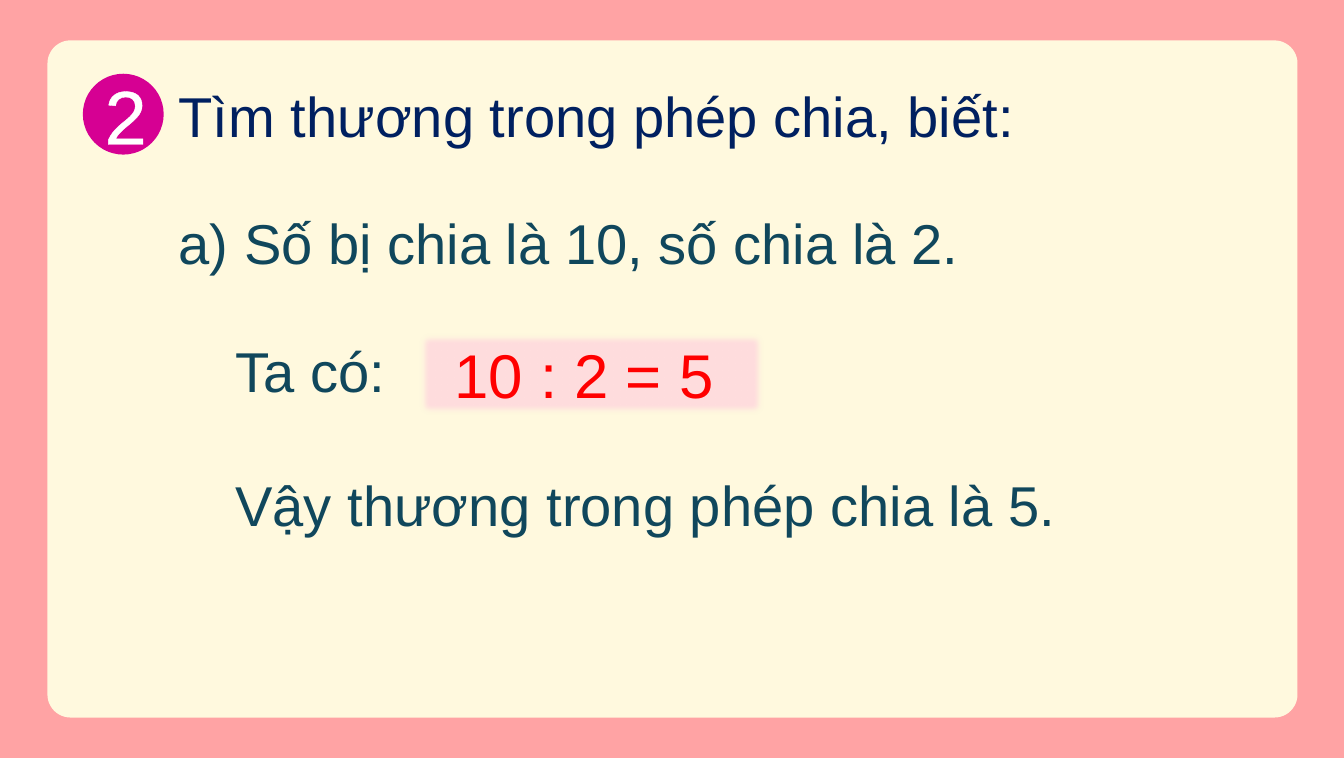
from dataclasses import dataclass

from lxml.etree import SubElement
from pptx import Presentation
from pptx.dml.color import RGBColor as RGB
from pptx.enum.shapes import MSO_SHAPE as SHAPE
from pptx.enum.text import MSO_ANCHOR as ANCHOR, PP_ALIGN as ALIGN
from pptx.oxml import parse_xml
from pptx.oxml.ns import nsdecls, qn
from pptx.util import Inches, Pt


@dataclass(frozen=True)
class Theme:
    font: str = "Arial"
    border: str = "FFA3A4"
    card: str = "FFF9DE"
    badge: str = "D60093"
    white: str = "FFFFFF"
    title: str = "002060"
    body: str = "10475C"
    highlight: str = "FFDDDE"
    answer: str = "FF0000"
    text_size: int = 40
    answer_size: int = 44
    badge_size: int = 54


theme = Theme()
prs = Presentation()
prs.slide_width, prs.slide_height = Inches(13.3), Inches(7.5)
s = prs.slides.add_slide(prs.slide_layouts[6])
s.background.fill.solid()
s.background.fill.fore_color.rgb = RGB.from_string(theme.border)


def add_panel(kind, box, color):
    sp = s.shapes.add_shape(kind, *map(Inches, box))
    sp.shadow.inherit = False
    sp.fill.solid()
    sp.fill.fore_color.rgb = RGB.from_string(color)
    sp.line.fill.background()
    return sp


def write(sp, text, size, color):
    tf = sp.text_frame
    tf.word_wrap = True
    p = tf.paragraphs[0]
    p.text = text
    p.font.name = theme.font
    p.font.size = Pt(size)
    p.font.color.rgb = RGB.from_string(color)
    return p


# Card
card = add_panel(SHAPE.ROUNDED_RECTANGLE, (0.47, 0.4, 12.37, 6.7), theme.card)
card.adjustments[0] = 0.034

# Exercise number, with outlined digit
badge = add_panel(SHAPE.OVAL, (0.82, 0.73, 0.8, 0.8), theme.badge)
badge.text_frame.vertical_anchor = ANCHOR.MIDDLE
p = write(badge, "2", theme.badge_size, theme.white)
p.alignment = ALIGN.CENTER
outline = parse_xml(
    f'<a:ln {nsdecls("a")} w="{Pt(1.45)}"><a:solidFill>'
    f'<a:srgbClr val="{theme.white}"/></a:solidFill></a:ln>')
p.runs[0].font._element.insert(0, outline)

# Soft-edged highlight behind the calculation
highlight = add_panel(SHAPE.RECTANGLE, (4.14, 3.28, 3.43, 0.84), theme.highlight)
highlight.line.color.rgb = RGB.from_string(theme.highlight)
highlight.line.width = Pt(2)
effects = highlight._element.spPr.find(qn("a:effectLst"))
SubElement(effects, qn("a:softEdge"), rad=str(Pt(5)))

# Question, working and answer
lines = [
    ("Tìm thương trong phép chia, biết:", (1.67, 0.76, 11.1, 0.77), theme.text_size, theme.title),
    ("a) Số bị chia là 10, số chia là 2.", (1.67, 2.01, 10.14, 0.77), theme.text_size, theme.body),
    ("Ta có:", (2.23, 3.28, 2.48, 0.77), theme.text_size, theme.body),
    ("10 : 2 = 5", (4.4, 3.28, 2.88, 0.84), theme.answer_size, theme.answer),
    ("Vậy thương trong phép chia là 5.", (2.23, 4.61, 10.64, 0.77), theme.text_size, theme.body),
]
for text, box, size, color in lines:
    write(s.shapes.add_textbox(*map(Inches, box)), text, size, color)

prs.save("out.pptx")
